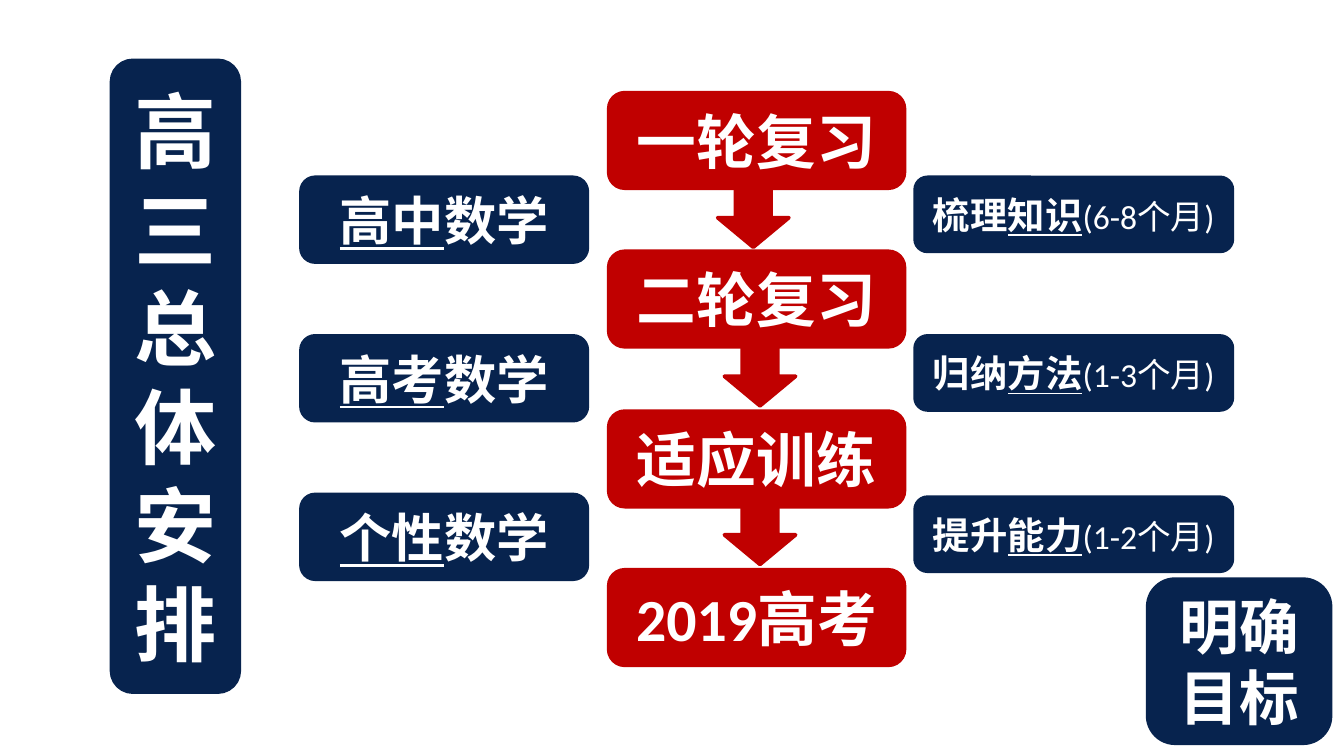
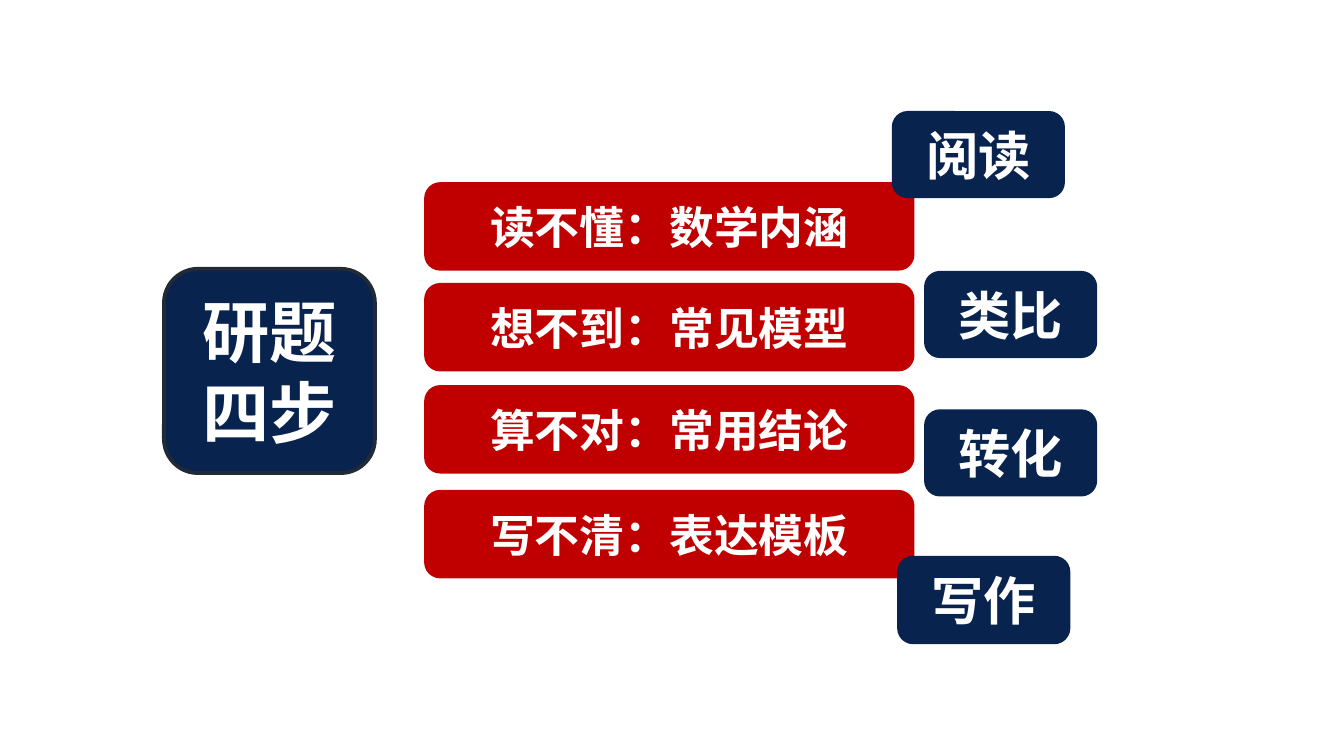
"""Build two slides: the final-year revision plan and the four steps of studying a problem."""
from pptx import Presentation
from pptx.dml.color import RGBColor
from pptx.enum.shapes import MSO_SHAPE as Preset
from pptx.enum.text import MSO_ANCHOR as Anchor, PP_ALIGN as Align
from pptx.util import Inches, Pt

NAVY, RED, WHITE, SLATE = "07234E", "C00000", "FFFFFF", "222A35"
UNDERLINED = {"underline": True}
DURATION = {"size": Pt(18), "bold": False}


def color(value):
    return RGBColor.from_string(value)


def add_block(page, place, fill, lines=(), size=28, font="Calibri", border=None, preset=Preset.ROUNDED_RECTANGLE):
    box = page.shapes.add_shape(preset, *[Inches(length) for length in place])
    box.shadow.inherit = False
    box.fill.solid()
    box.fill.fore_color.rgb = color(fill)
    box.line.color.rgb = color(border or fill)
    box.line.width = Pt(2)
    frame = box.text_frame
    frame.word_wrap = True
    frame.vertical_anchor = Anchor.MIDDLE
    for index, spans in enumerate(lines):
        para = frame.add_paragraph() if index else frame.paragraphs[0]
        para.alignment = Align.CENTER
        for text, changes in spans:
            span = para.add_run()
            span.text = text
            span.font.color.rgb = color(WHITE)
            formats = {"name": font, "size": Pt(size), "bold": True} | changes
            for name, value in formats.items():
                setattr(span.font, name, value)


deck = Presentation()
deck.slide_width = Inches(10)
deck.slide_height = deck.slide_width * 9 // 16
blank = deck.slide_layouts[6]

plan = deck.slides.add_slide(blank)
step = 1.18
stages = [("一轮复习", 0.69), ("二轮复习", 1.87), ("适应训练", 3.06), ("2019高考", 4.24)]
for stage, top in stages:
    add_block(plan, (4.53, top, 2.2, 0.71), RED, [[(stage, {})]], 32)
for row, left in enumerate([5.34, 5.39, 5.39]):
    add_block(plan, (left, 1.4 + row * step, 0.53, 0.44), RED, preset=Preset.DOWN_ARROW)

goals = [("梳理", "知识", "(6-8个月)", 1.32), ("归纳", "方法", "(1-3个月)", 2.5), ("提升", "能力", "(1-2个月)", 3.7)]
for verb, target, duration, top in goals:
    spans = [(verb, {}), (target, UNDERLINED), (duration, DURATION)]
    add_block(plan, (6.81, top, 2.36, 0.55), NAVY, [spans], 20)
for row, focus in enumerate(["高中", "高考", "个性"]):
    spans = [(focus, UNDERLINED), ("数学", {})]
    add_block(plan, (2.24, 1.32 + row * step, 2.13, 0.63), NAVY, [spans])

title_lines = [[(text, {})] for text in ["高三总", "体", "安", "排"]]
add_block(plan, (0.83, 0.45, 0.95, 4.7), NAVY, title_lines, 44)
add_block(plan, (8.54, 4.31, 1.36, 1.22), NAVY, [[("明确", {})], [("目标", {})]], 32)

steps = deck.slides.add_slide(blank)
problems = [("读不懂：数学内涵", 1.37), ("想不到：常见模型", 2.12), ("写不清：表达模板", 3.66), ("算不对：常用结论", 2.88)]
for problem, top in problems:
    add_block(steps, (3.17, top, 3.62, 0.63), RED, [[(problem, {})]], 24, "Noto Sans CJK SC")
skills = [("阅读", 6.65, 0.84, 0.62), ("写作", 6.69, 4.15, 0.63), ("类比", 6.89, 2.03, 0.62), ("转化", 6.89, 3.06, 0.62)]
for skill, left, top, height in skills:
    add_block(steps, (left, top, 1.26, height), NAVY, [[(skill, {})]])
add_block(steps, (1.22, 2, 1.57, 1.52), NAVY, [[("研题", {})], [("四步", {})]], 36, border=SLATE)

deck.save("out.pptx")
